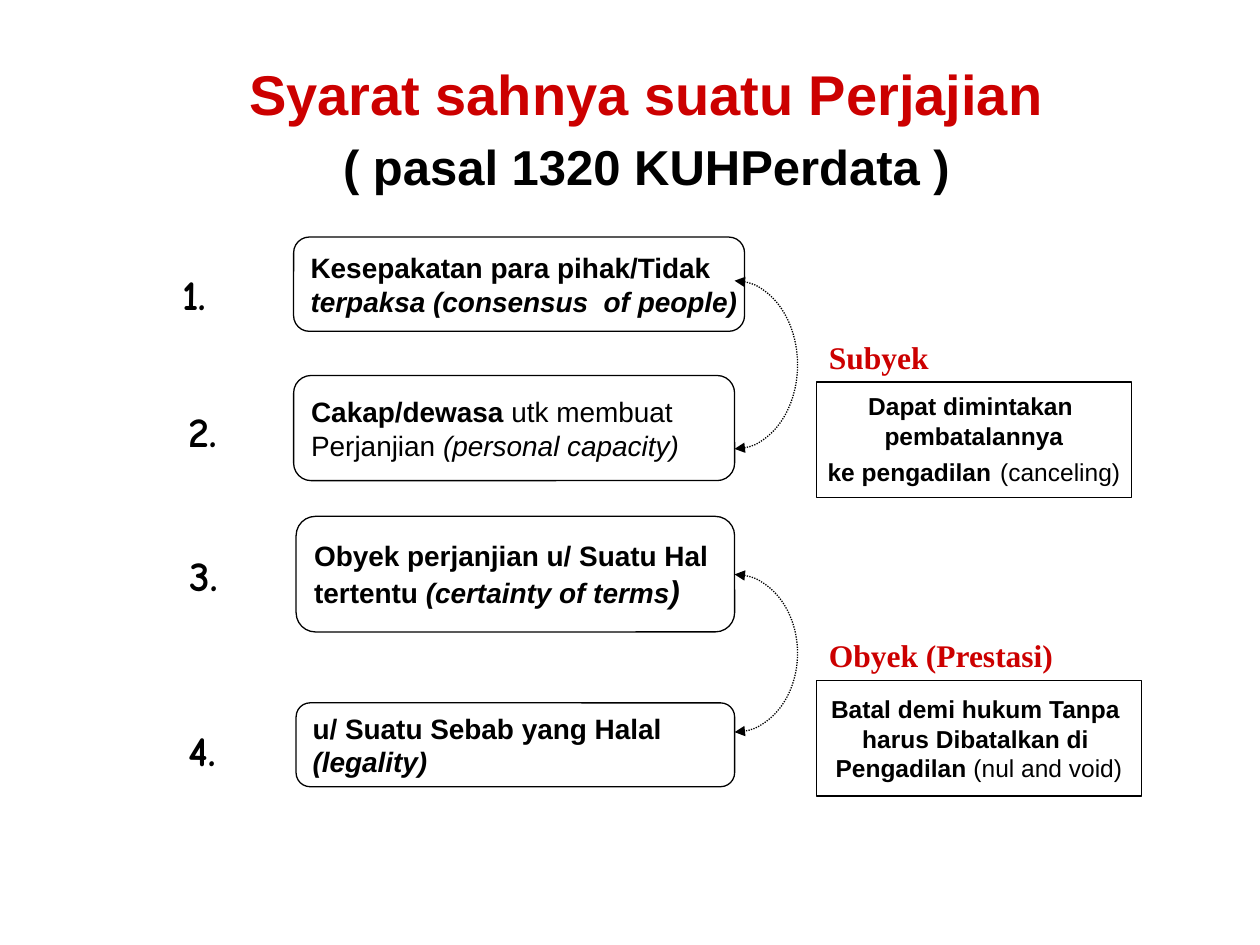
import pptx
import pptx.dml.color
import pptx.enum.dml
import pptx.enum.shapes
import pptx.enum.text
import pptx.oxml
import pptx.oxml.ns
import pptx.util

Cm = pptx.util.Cm
Pt = pptx.util.Pt
SHAPE = pptx.enum.shapes.MSO_SHAPE
ALIGN = pptx.enum.text.PP_ALIGN
ANCHOR = pptx.enum.text.MSO_ANCHOR
RED = pptx.dml.color.RGBColor(0xCC, 0x00, 0x00)
BLACK = pptx.dml.color.RGBColor(0x00, 0x00, 0x00)
WHITE = pptx.dml.color.RGBColor(0xFF, 0xFF, 0xFF)

TITLE = [("Syarat sahnya suatu Perjajian", 32, RED), ("( pasal 1320 KUHPerdata )", 28, BLACK)]

CONDITIONS = [
    {"number": (3.43, 5.28), "box": (5.92, 4.78, 9.09, 1.9),
     "text": [[("Kesepakatan para pihak/Tidak", "b", 16)],
              [("terpaksa (consensus  of people)", "bi", 16)]]},
    {"number": (3.56, 8.05), "box": (5.92, 7.57, 8.89, 2.12),
     "text": [[("Cakap/dewasa ", "b", 16), ("utk membuat", "", 16)],
              [("Perjanjian ", "", 16), ("(personal capacity)", "i", 16)]]},
    {"number": (3.58, 10.95), "box": (5.97, 10.41, 8.84, 2.33),
     "text": [[("Obyek perjanjian u/ Suatu Hal", "b", 16)],
              [("tertentu ", "b", 16), ("(certainty of terms", "bi", 16), (")", "bi", 18)]]},
    {"number": (3.56, 14.48), "box": (5.97, 14.17, 8.84, 1.69),
     "text": [[("u/ Suatu Sebab yang Halal", "b", 16)],
              [("(legality)", "bi", 16)]]},
]

CONSEQUENCES = [
    {"heading": "Subyek", "arc": (5.66, 3.39), "box": (16.46, 7.7, 6.35, 2.33),
     "text": [[("Dapat dimintakan ", "b", 14)],
              [("pembatalannya", "b", 14)],
              [("ke pengadilan", "b", 14), (" ", "", 18), ("(canceling)", "", 14)]]},
    {"heading": "Obyek (Prestasi)", "arc": (11.58, 3.18), "box": (16.46, 13.72, 6.55, 2.33),
     "text": [[("Batal demi hukum Tanpa ", "b", 14)],
              [("harus Dibatalkan di ", "b", 14)],
              [("Pengadilan ", "b", 14), ("(nul and void)", "", 14)]]},
]

ARC_RIGHT, ARC_RADIUS = 16.08, 1.27
HEADING_HEIGHT = 1.02


def add_run(p, text, style, size, font, color):
    r = p.add_run()
    r.text = text
    r.font.name = font
    r.font.size = Pt(size)
    r.font.bold = "b" in style
    r.font.italic = "i" in style
    r.font.color.rgb = color


def add_box(slide, kind, place, lines, align):
    sp = slide.shapes.add_shape(kind, *map(Cm, place))
    sp.shadow.inherit = False
    sp.fill.solid()
    sp.fill.fore_color.rgb = WHITE
    sp.line.color.rgb = BLACK
    sp.line.width = Pt(0.75)
    tf = sp.text_frame
    tf.word_wrap = False
    tf.vertical_anchor = ANCHOR.MIDDLE
    for i, runs in enumerate(lines):
        p = tf.add_paragraph() if i else tf.paragraphs[0]
        p.alignment = align
        for text, style, size in runs:
            add_run(p, text, style, size, "Arial", BLACK)


def add_label(slide, place, text, size, font, color):
    tf = slide.shapes.add_textbox(*map(Cm, place)).text_frame
    tf.word_wrap = True
    add_run(tf.paragraphs[0], text, "b", size, font, color)


def add_arc(slide, top, height):
    left = ARC_RIGHT - 2 * ARC_RADIUS
    sp = slide.shapes.add_shape(SHAPE.ARC, Cm(left), Cm(top), Cm(2 * ARC_RADIUS), Cm(height))
    sp.adjustments[0] = 162
    sp.adjustments[1] = 54
    sp.shadow.inherit = False
    sp.fill.background()
    sp.line.color.rgb = BLACK
    sp.line.width = Pt(0.75)
    sp.line.dash_style = pptx.enum.dml.MSO_LINE.ROUND_DOT
    ln = sp.line._get_or_add_ln()
    for tag in ("a:headEnd", "a:tailEnd"):
        end = pptx.oxml.parse_xml(f'<{tag} {pptx.oxml.ns.nsdecls("a")} type="triangle"/>')
        ln.append(end)


def add_title(slide):
    sp = slide.shapes.title
    sp.left, sp.top, sp.width, sp.height = map(Cm, (4.13, 1.07, 17.8, 2.97))
    tf = sp.text_frame
    tf.auto_size = pptx.enum.text.MSO_AUTO_SIZE.NONE
    tf.vertical_anchor = ANCHOR.TOP
    for i, (text, size, color) in enumerate(TITLE):
        p = tf.add_paragraph() if i else tf.paragraphs[0]
        p.alignment = ALIGN.CENTER
        p.space_before = Pt(5.6 if i else 0)
        add_run(p, text, "b", size, "Arial", color)


def main():
    prs = pptx.Presentation()
    prs.slide_width, prs.slide_height = Cm(25.4), Cm(19.05)
    slide = prs.slides.add_slide(prs.slide_layouts[5])
    add_title(slide)
    for n, item in enumerate(CONDITIONS, 1):
        add_box(slide, SHAPE.FLOWCHART_ALTERNATE_PROCESS, item["box"], item["text"], ALIGN.LEFT)
        add_label(slide, (*item["number"], 1.4, 1.28), f"{n}.", 24, "Comic Neue", BLACK)
    for item in CONSEQUENCES:
        left, top, width, height = item["box"]
        add_arc(slide, *item["arc"])
        add_label(slide, (left, top - HEADING_HEIGHT, width, HEADING_HEIGHT),
                  item["heading"], 18, "Times New Roman", RED)
        add_box(slide, SHAPE.RECTANGLE, item["box"], item["text"], ALIGN.CENTER)
    prs.save("out.pptx")


if __name__ == "__main__":
    main()
